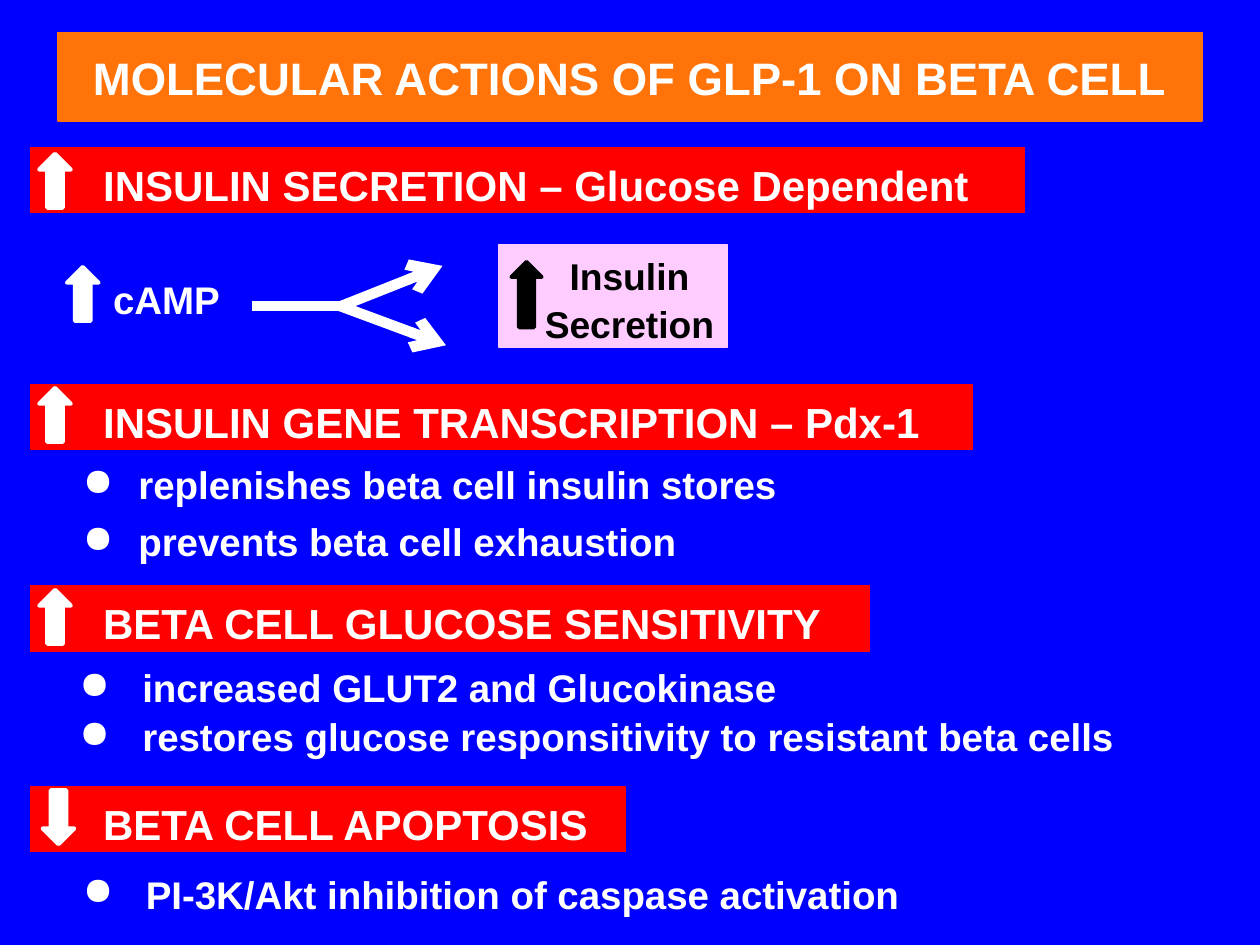
from lxml import etree
from pptx import Presentation
from pptx.dml.color import RGBColor
from pptx.enum.shapes import MSO_CONNECTOR, MSO_SHAPE
from pptx.enum.text import MSO_ANCHOR, MSO_AUTO_SIZE, PP_ALIGN
from pptx.oxml.ns import qn
from pptx.util import Cm, Pt

RECTANGLE, UP, DOWN = MSO_SHAPE.RECTANGLE, MSO_SHAPE.UP_ARROW, MSO_SHAPE.DOWN_ARROW
STRAIGHT = MSO_CONNECTOR.STRAIGHT
LEFT, CENTER = PP_ALIGN.LEFT, PP_ALIGN.CENTER
TOP, MIDDLE = MSO_ANCHOR.TOP, MSO_ANCHOR.MIDDLE

THEME = {
    "font": "Arial",
    "blue": RGBColor(0x00, 0x00, 0xFF),
    "orange": RGBColor(0xFF, 0x73, 0x08),
    "red": RGBColor(0xFF, 0x00, 0x00),
    "pink": RGBColor(0xFF, 0xCC, 0xFF),
    "white": RGBColor(0xFF, 0xFF, 0xFF),
    "black": RGBColor(0x00, 0x00, 0x00),
    "title": Pt(26),
    "heading": Pt(24),
    "body": Pt(22),
    "label": Pt(21.3),
}


def paint(shape, color, line_width):
    shape.shadow.inherit = False
    shape.fill.solid()
    shape.fill.fore_color.rgb = THEME[color]
    shape.line.color.rgb = THEME[color]
    shape.line.width = Pt(line_width)


def write(shape, lines, size, color="white", align=LEFT, anchor=TOP, spacing=1.06, **margins):
    frame = shape.text_frame
    settings = {"word_wrap": True, "auto_size": MSO_AUTO_SIZE.NONE, "vertical_anchor": anchor}
    for name, value in {**settings, **margins}.items():
        setattr(frame, name, value)
    for number, line in enumerate(lines):
        para = frame.add_paragraph() if number else frame.paragraphs[0]
        para.alignment = align
        para.line_spacing = spacing
        span = para.add_run()
        span.text = line
        font = {"name": THEME["font"], "size": THEME[size], "bold": True}
        for name, value in font.items():
            setattr(span.font, name, value)
        span.font.color.rgb = THEME[color]


deck = Presentation()
deck.slide_width, deck.slide_height = Cm(25.4), Cm(19.05)
page = deck.slides.add_slide(deck.slide_layouts[5])
page.background.fill.solid()
page.background.fill.fore_color.rgb = THEME["blue"]

title = page.shapes.title
title.left, title.top, title.width, title.height = Cm(1.17), Cm(0.66), Cm(23.06), Cm(1.78)
paint(title, "orange", 0.75)
write(title, ["MOLECULAR ACTIONS OF GLP-1 ON BETA CELL"], "title",
      align=CENTER, anchor=MIDDLE, spacing=1.0)

headings = [
    (2.97, 20.04, "INSULIN SECRETION – Glucose Dependent"),
    (7.75, 19.0, "INSULIN GENE TRANSCRIPTION – Pdx-1"),
    (11.81, 16.92, "BETA CELL GLUCOSE SENSITIVITY"),
    (15.85, 11.99, "BETA CELL APOPTOSIS"),
]
for top, width, text in headings:
    bar = page.shapes.add_shape(RECTANGLE, Cm(0.61), Cm(top), Cm(width), Cm(1.32))
    paint(bar, "red", 0.75)
    write(bar, [text], "heading", margin_left=Cm(1.47), margin_top=Cm(0.18))

bullet_lists = [
    (1.42, 9.12, 21.69, 2.97, 1.12, 4.4,
     ["replenishes beta cell insulin stores", "prevents beta cell exhaustion"]),
    (1.35, 13.21, 23.77, 3.23, 1.27, 0,
     ["increased GLUT2 and Glucokinase",
      "restores glucose responsitivity to resistant beta cells"]),
    (1.42, 17.37, 21.69, 1.47, 1.27, 0, ["PI-3K/Akt inhibition of caspase activation"]),
]
for left, top, width, height, indent, gap, lines in bullet_lists:
    box = page.shapes.add_textbox(Cm(left), Cm(top), Cm(width), Cm(height))
    write(box, lines, "body")
    for number, para in enumerate(box.text_frame.paragraphs):
        para.space_before = Pt(gap if number else 0)
        properties = para._p.get_or_add_pPr()
        properties.set("marL", str(Cm(indent)))
        properties.set("indent", str(-Cm(indent)))
        etree.SubElement(properties, qn("a:buChar")).set("char", "●")

camp = page.shapes.add_textbox(Cm(2.03), Cm(5.38), Cm(2.8), Cm(1.19))
write(camp, ["cAMP"], "body")

secretion = page.shapes.add_shape(RECTANGLE, Cm(10.06), Cm(4.93), Cm(4.6), Cm(2.08))
paint(secretion, "pink", 0.75)
write(secretion, ["Insulin", "Secretion"], "label", color="black", align=CENTER,
      margin_left=Cm(0.66), margin_right=0)

block_arrows = [
    (UP, 0.79, 3.1, 0.64, 1.09, "white"),
    (UP, 0.79, 7.82, 0.64, 1.09, "white"),
    (UP, 0.79, 11.89, 0.64, 1.09, "white"),
    (DOWN, 0.86, 15.93, 0.64, 1.09, "white"),
    (UP, 1.35, 5.38, 0.64, 1.09, "white"),
    (UP, 10.31, 5.28, 0.61, 1.32, "black"),
]
for kind, left, top, width, height, color in block_arrows:
    arrow = page.shapes.add_shape(kind, Cm(left), Cm(top), Cm(width), Cm(height))
    paint(arrow, color, 2.25)

branches = [
    (5.08, 6.17, 6.88, 6.17, False),
    (6.88, 6.17, 8.92, 5.36, True),
    (6.86, 6.17, 8.99, 6.96, True),
]
for start_x, start_y, end_x, end_y, pointed in branches:
    branch = page.shapes.add_connector(STRAIGHT, Cm(start_x), Cm(start_y), Cm(end_x), Cm(end_y))
    branch.line.color.rgb = THEME["white"]
    branch.line.width = Pt(6)
    if pointed:
        etree.SubElement(branch.line._get_or_add_ln(), qn("a:tailEnd")).set("type", "arrow")
    etree.SubElement(branch._element.spPr, qn("a:effectLst"))

deck.save("out.pptx")
